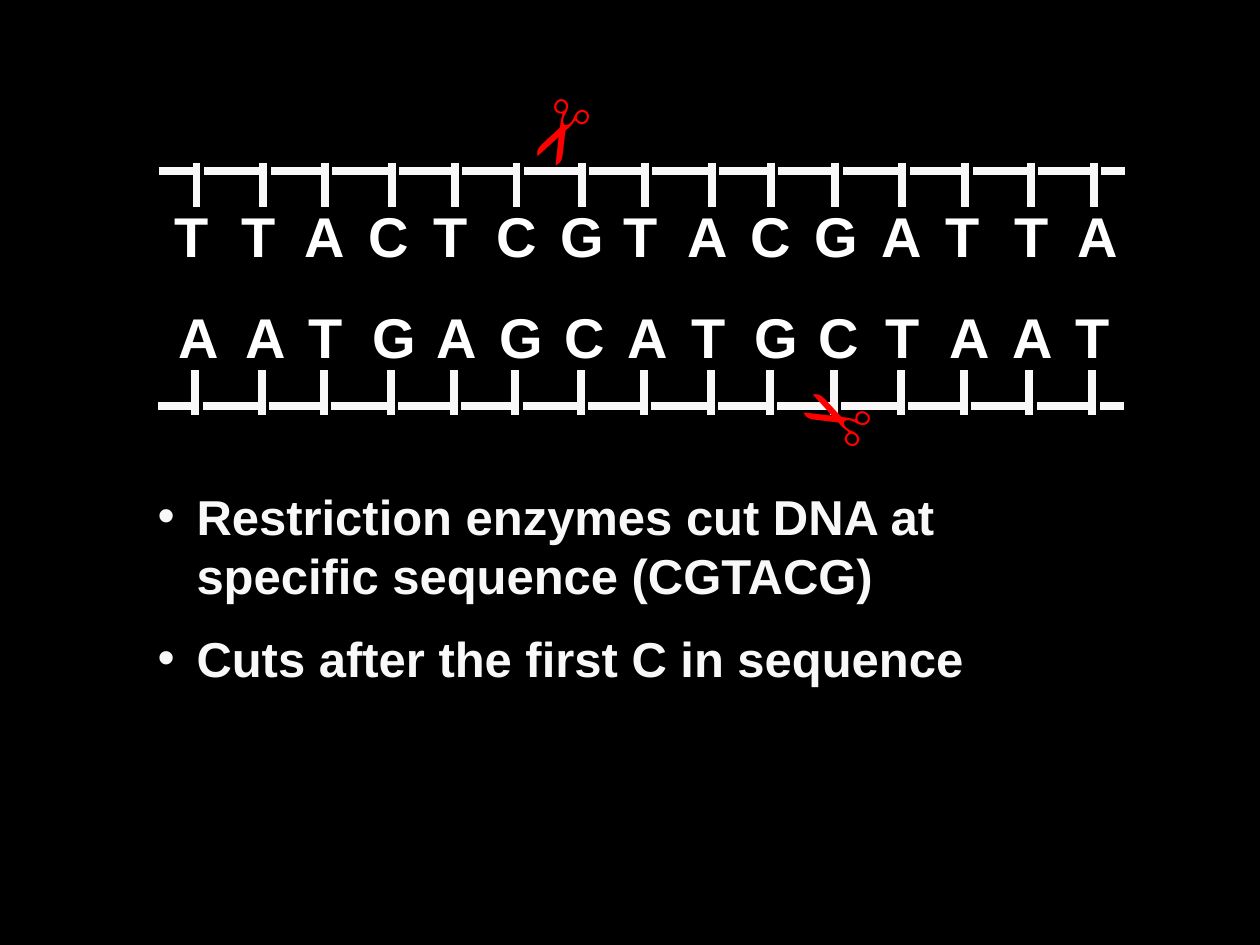
from lxml.etree import SubElement
from pptx import Presentation
from pptx.dml.color import RGBColor
from pptx.enum.shapes import MSO_CONNECTOR
from pptx.enum.text import MSO_ANCHOR, MSO_AUTO_SIZE
from pptx.oxml import parse_xml
from pptx.oxml.ns import nsdecls, qn
from pptx.util import Inches, Pt

COLS = [1.26, 1.79, 2.28, 2.81, 3.31, 3.8, 4.32, 4.82,
        5.35, 5.82, 6.33, 6.86, 7.36, 7.88, 8.38]
SPOTS = [1.29, 1.82, 2.32, 2.83, 3.34, 3.84, 4.35, 4.85,
         5.36, 5.86, 6.37, 6.9, 7.41]
STRANDS = [
    dict(bases="TTACTCGTACGATTA", left=0, text=0, last=[7.95, 8.45],
         top=1.55, bar=1.36, ends=(1.29, 1.64)),
    dict(bases="AATGAGCATGCTAAT", left=-0.01, text=0.03, last=[7.91, 8.41],
         top=2.35, bar=3.22, ends=(2.94, 3.29)),
]
CUTS = [(4.09, 0.7, 117.3), (6.23, 2.95, 207.3)]
POINTS = ["Restriction enzymes cut DNA at specific sequence (CGTACG)",
          "Cuts after the first C in sequence"]
SHADE = f"""<a:effectLst {nsdecls('a')}>
<a:outerShdw dist="35921" dir="2700000" algn="ctr" rotWithShape="0">
<a:srgbClr val="000000"/></a:outerShdw></a:effectLst>"""


def tint(code):
    return RGBColor.from_string(code)


def write(box, lines, size=32, color="FFFFFF", indent=0.0, mark=None, gap=0):
    frame = box.text_frame
    frame.word_wrap = True
    frame.auto_size = MSO_AUTO_SIZE.NONE
    frame.vertical_anchor = MSO_ANCHOR.TOP
    for i, line in enumerate(lines):
        para = frame.paragraphs[0] if i == 0 else frame.add_paragraph()
        props = para._p.get_or_add_pPr()
        props.set("marL", str(Inches(indent)))
        props.set("indent", str(-Inches(indent)))
        if mark:
            SubElement(props, qn("a:buChar")).set("char", mark)
        para.space_before = Pt(gap if i else 0)
        run = para.add_run()
        run.text = line
        font = run.font
        font.name, font.size, font.bold = "Arial", Pt(size), True
        font.color.rgb = tint(color)


def place(slide, x, y, w, h):
    return slide.shapes.add_textbox(Inches(x), Inches(y), Inches(w), Inches(h))


def stroke(slide, *ends):
    line = slide.shapes.add_connector(MSO_CONNECTOR.STRAIGHT, *map(Inches, ends))
    line.line.color.rgb = tint("F8F8F8")
    line.line.width = Pt(4.5)
    line._element.spPr.append(parse_xml(SHADE))


def main():
    deck = Presentation()
    deck.slide_width, deck.slide_height = Inches(10), Inches(7.5)
    slide = deck.slides.add_slide(deck.slide_layouts[1])
    slide.background.fill.solid()
    slide.background.fill.fore_color.rgb = tint("000000")
    title = slide.shapes.title._element
    title.getparent().remove(title)

    for row in STRANDS:
        for col, spot, base in zip(COLS, SPOTS + row["last"], row["bases"]):
            x, bar = col + row["left"], row["bar"]
            head, foot = row["ends"]
            write(place(slide, spot + row["text"], row["top"], 0.87, 0.63),
                  [base], indent=0.38)
            stroke(slide, x, bar, x + 0.55, bar)
            stroke(slide, x + 0.3, head, x + 0.3, foot)

    body = slide.placeholders[1]
    body.left, body.top, body.width, body.height = map(Inches, (1.15, 3.81, 7.46, 1.74))
    write(body, POINTS, size=28, color="F8F8F8", indent=0.31, mark="•", gap=14)

    for x, y, turn in CUTS:
        box = place(slide, x, y, 0.77, 0.77)
        box.rotation = turn
        write(box, ["✂"], size=40, color="FF0000")

    deck.save("out.pptx")


if __name__ == "__main__":
    main()
